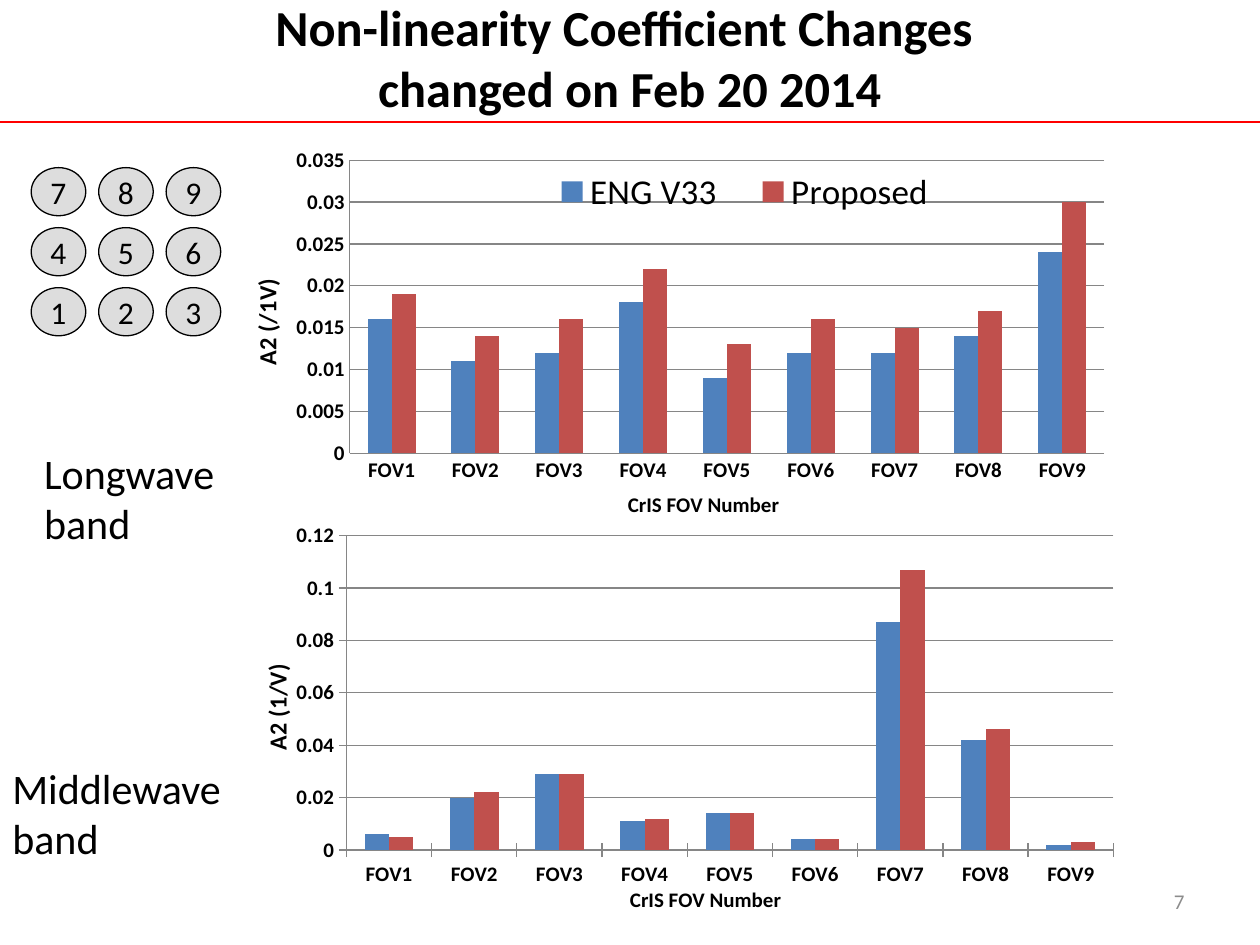
"""Build the slide on changes of the CrIS non-linearity coefficients."""
from lxml import etree
from pptx import Presentation
from pptx import util as u
from pptx.chart import data
from pptx.dml.color import RGBColor
from pptx.enum import chart as ch
from pptx.enum import shapes, text
from pptx.oxml.ns import qn

BLACK = RGBColor(0x00, 0x00, 0x00)
RED = RGBColor(0xFF, 0x00, 0x00)
GREY = RGBColor(0x8C, 0x8C, 0x8C)
AXIS_GREY = RGBColor(0x86, 0x86, 0x86)
DISC_GREY = RGBColor(0xDD, 0xDD, 0xDD)
BAR_COLORS = [RGBColor(0x4F, 0x81, 0xBD), RGBColor(0xC0, 0x50, 0x4D)]


def style_font(font, size, bold=False, color=BLACK):
    values = {"name": "Calibri", "size": u.Pt(size), "bold": bold}
    for key, value in values.items():
        setattr(font, key, value)
    font.color.rgb = color


def place(element, index, **layout_values):
    for old in element.findall(qn("c:layout")):
        element.remove(old)
    layout = etree.Element(qn("c:layout"))
    manual = etree.SubElement(layout, qn("c:manualLayout"))
    for tag, value in layout_values.items():
        etree.SubElement(manual, qn("c:" + tag)).set("val", str(value))
    element.insert(index, layout)


deck = Presentation()
deck.slide_width, deck.slide_height = u.Cm(25.4), u.Cm(19.05)
slide = deck.slides.add_slide(deck.slide_layouts[5])

rule = slide.shapes.add_connector(
    shapes.MSO_CONNECTOR.STRAIGHT, 0, u.Cm(2.46), u.Cm(25.4), u.Cm(2.46))
rule.line.color.rgb = RED
rule.line.width = u.Pt(1.25)
etree.SubElement(rule._element.spPr, qn("a:effectLst"))

heading = slide.shapes.title
heading_place = {"left": 1.27, "top": 0, "width": 22.86, "height": 2.29}
for key, value in heading_place.items():
    setattr(heading, key, u.Cm(value))
heading.text_frame.text = "Non-linearity Coefficient Changes \vchanged on Feb 20 2014"
heading_format = {"auto_size": text.MSO_AUTO_SIZE.NONE, "word_wrap": True,
                  "vertical_anchor": text.MSO_ANCHOR.MIDDLE}
for key, value in heading_format.items():
    setattr(heading.text_frame, key, value)
heading.text_frame.paragraphs[0].alignment = text.PP_ALIGN.CENTER
for run in heading.text_frame.paragraphs[0].runs:
    style_font(run.font, 28.8, True)

bands = [
    {"at": (3.23, 2.74, 19.48, 7.82), "plot": (0.196, 0.063, 0.781, 0.761),
     "size": 20, "tick": ch.XL_TICK_MARK.NONE, "maximum": 0.035, "unit": 0.005,
     "unit_title": ("A2 (/1V)", 0.088, 0.36), "fov_title": (0.48, 0.91),
     "legend": True,
     "series": {
         "ENG V33": (0.016, 0.011, 0.012, 0.018, 0.009, 0.012, 0.012, 0.014, 0.024),
         "Proposed": (0.019, 0.014, 0.016, 0.022, 0.013, 0.016, 0.015, 0.017, 0.03)}},
    {"at": (4.9, 9.96, 17.96, 8.56), "plot": (0.116, 0.1, 0.861, 0.754),
     "size": 10, "tick": ch.XL_TICK_MARK.CROSS, "maximum": 0.12, "unit": 0.02,
     "unit_title": ("A2 (1/V)", 0.014, 0.4), "fov_title": (0.43, 0.93),
     "legend": False,
     "series": {
         "Series 1": (0.006, 0.02, 0.029, 0.011, 0.014, 0.004, 0.087, 0.042, 0.002),
         "Series 2": (0.005, 0.022, 0.029, 0.012, 0.014, 0.004, 0.107, 0.046, 0.003)}},
]
for band in bands:
    coefficients = data.CategoryChartData()
    coefficients.categories = [f"FOV{number}" for number in range(1, 10)]
    for name, values in band["series"].items():
        coefficients.add_series(name, values)
    chart = slide.shapes.add_chart(
        ch.XL_CHART_TYPE.COLUMN_CLUSTERED, *map(u.Cm, band["at"]), coefficients).chart
    chart.has_title = False
    style_font(chart.font, band["size"])

    bars = chart.plots[0]
    for key, value in {"gap_width": 150, "overlap": 0, "vary_by_categories": False}.items():
        setattr(bars, key, value)
    for series, color in zip(bars.series, BAR_COLORS):
        series.format.fill.solid()
        series.format.fill.fore_color.rgb = color

    fov_axis, a2_axis = chart.category_axis, chart.value_axis
    a2_scale = {"minimum_scale": 0, "maximum_scale": band["maximum"],
                "major_unit": band["unit"], "has_major_gridlines": True}
    for key, value in a2_scale.items():
        setattr(a2_axis, key, value)
    a2_axis.major_gridlines.format.line.color.rgb = AXIS_GREY
    unit_name, unit_x, unit_y = band["unit_title"]
    fov_x, fov_y = band["fov_title"]
    axis_titles = [(fov_axis, "CrIS FOV Number", 12, fov_x, fov_y, 0),
                   (a2_axis, unit_name, 14, unit_x, unit_y, -5400000)]
    for axis, wording, size, x, y, turn in axis_titles:
        axis.major_tick_mark = band["tick"]
        axis.format.line.color.rgb = AXIS_GREY
        style_font(axis.tick_labels.font, 12, True)
        frame = axis.axis_title.text_frame
        frame.text = wording
        style_font(frame.paragraphs[0].runs[0].font, size, True)
        title_element = axis.axis_title._element
        body = next(title_element.iter(qn("a:bodyPr")))
        body.set("rot", str(turn))
        body.set("vert", "horz")
        place(title_element, 1, xMode="edge", yMode="edge", x=x, y=y)

    x, y, w, h = band["plot"]
    place(chart._chartSpace.chart.plotArea, 0, layoutTarget="inner",
          xMode="edge", yMode="edge", x=x, y=y, w=w, h=h)
    chart.has_legend = band["legend"]
    if band["legend"]:
        chart.legend.position = ch.XL_LEGEND_POSITION.TOP
        chart.legend.include_in_layout = False
        style_font(chart.legend.font, 20)
        place(chart.legend._element, 1, xMode="edge", yMode="edge",
              x=0.38, y=0.08, w=0.45, h=0.13)

captions = [
    ("Longwave\nband", (0.64, 8.89, 3.99, 2.31), 24, BLACK,
     text.PP_ALIGN.LEFT, text.MSO_ANCHOR.TOP),
    ("Middlewave\nband", (0, 15.24, 5.31, 2.31), 24, BLACK,
     text.PP_ALIGN.LEFT, text.MSO_ANCHOR.TOP),
    ("7", (18.2, 17.65, 5.93, 1.02), 12, GREY,
     text.PP_ALIGN.RIGHT, text.MSO_ANCHOR.MIDDLE),
]
for wording, position, size, color, alignment, anchor in captions:
    frame = slide.shapes.add_textbox(*map(u.Cm, position)).text_frame
    frame.text = wording
    frame.word_wrap = True
    frame.vertical_anchor = anchor
    for line in frame.paragraphs:
        line.alignment = alignment
        style_font(line.runs[0].font, size, color=color)

for row, fov_numbers in enumerate(["789", "456", "123"]):
    for column, number in enumerate(fov_numbers):
        disc = slide.shapes.add_shape(
            shapes.MSO_SHAPE.OVAL, u.Cm(0.63 + 1.36 * column),
            u.Cm(3.38 + 1.21 * row), u.Cm(1.1), u.Cm(0.97))
        disc.shadow.inherit = False
        disc.fill.solid()
        disc.fill.fore_color.rgb = DISC_GREY
        disc.line.color.rgb = BLACK
        disc.line.width = u.Pt(0.75)
        frame = disc.text_frame
        frame.text = number
        disc_format = {"word_wrap": False, "vertical_anchor": text.MSO_ANCHOR.MIDDLE,
                       "margin_left": 0, "margin_right": 0,
                       "margin_top": 0, "margin_bottom": 0}
        for key, value in disc_format.items():
            setattr(frame, key, value)
        frame.paragraphs[0].alignment = text.PP_ALIGN.CENTER
        style_font(frame.paragraphs[0].runs[0].font, 18)

deck.save("out.pptx")
